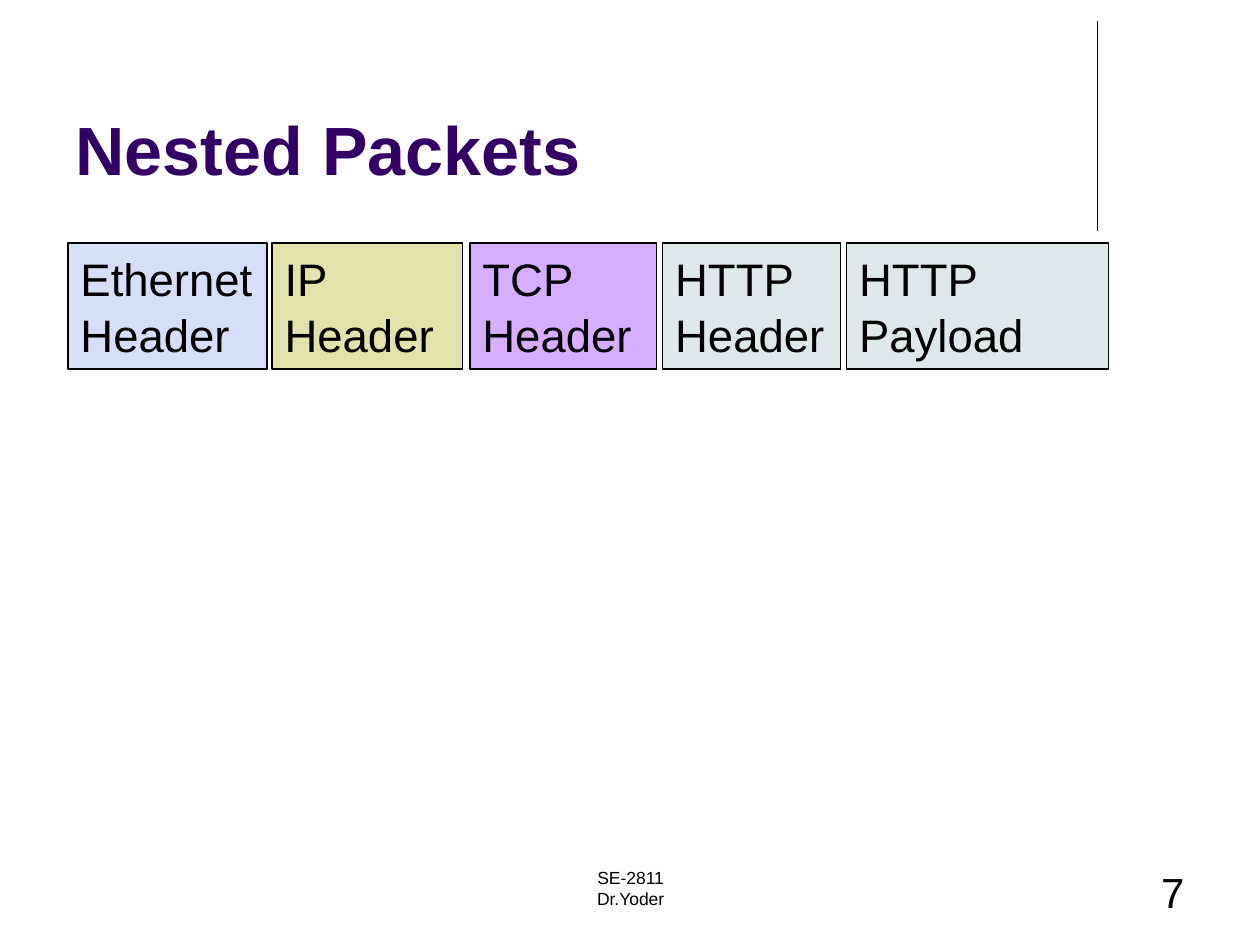
from pptx import Presentation
from pptx.dml.color import RGBColor
from pptx.enum.shapes import MSO_CONNECTOR, MSO_SHAPE
from pptx.enum.text import MSO_ANCHOR, PP_ALIGN
from pptx.oxml.ns import qn
from pptx.util import Inches, Pt
from lxml import etree

RECT = MSO_SHAPE.RECTANGLE
STRAIGHT = MSO_CONNECTOR.STRAIGHT
TOP, MIDDLE, BOTTOM = MSO_ANCHOR.TOP, MSO_ANCHOR.MIDDLE, MSO_ANCHOR.BOTTOM
LEFT, CENTER, RIGHT = PP_ALIGN.LEFT, PP_ALIGN.CENTER, PP_ALIGN.RIGHT

FIELDS = [
    ("Ethernet", "Header", 0.54, 1.58, "D5DFF7"),
    ("IP", "Header", 2.16, 1.51, "E2E2AA"),
    ("TCP", "Header", 3.73, 1.48, "D6ADFF"),
    ("HTTP", "Header", 5.26, 1.41, "DDE9E9"),
    ("HTTP", "Payload", 6.72, 2.08, "DDE9E9"),
]


def color(value):
    return RGBColor.from_string(value)


class SlideBuilder:
    font = "Arial"
    ink = "000000"
    line_width = Pt(0.75)

    def __init__(self, slide):
        self.slide = slide

    def set_text(self, sp, lines, size, align=LEFT, anchor=TOP, ink=ink, bold=False, gap=0):
        tf = sp.text_frame
        frame = {"word_wrap": True, "vertical_anchor": anchor}
        for name, value in frame.items():
            setattr(tf, name, value)
        style = {"name": self.font, "size": Pt(size), "bold": bold}
        for i, line in enumerate(lines):
            p = tf.add_paragraph() if i else tf.paragraphs[0]
            p.alignment = align
            p.space_before = Pt(gap if i else 0)
            r = p.add_run()
            r.text = line
            for name, value in style.items():
                setattr(r.font, name, value)
            r.font.color.rgb = color(ink)

    def title(self, text, left, top, width, height):
        sp = self.slide.shapes.title
        box = {"left": left, "top": top, "width": width, "height": height}
        for name, value in box.items():
            setattr(sp, name, Inches(value))
        self.set_text(sp, [text], 39, anchor=BOTTOM, ink="330066", bold=True)

    def text(self, lines, left, top, width, height, size, align):
        sp = self.slide.shapes.add_textbox(*map(Inches, (left, top, width, height)))
        self.set_text(sp, lines, size, align)

    def box(self, lines, left, top, width, height, fill):
        sp = self.slide.shapes.add_shape(RECT, *map(Inches, (left, top, width, height)))
        sp.shadow.inherit = False
        sp.fill.solid()
        sp.fill.fore_color.rgb = color(fill)
        sp.line.color.rgb = color(self.ink)
        sp.line.width = self.line_width
        sp.text_frame.margin_right = 0
        self.set_text(sp, lines, 26, anchor=MIDDLE, gap=1)

    def line(self, x1, y1, x2, y2):
        cxn = self.slide.shapes.add_connector(STRAIGHT, *map(Inches, (x1, y1, x2, y2)))
        cxn.line.color.rgb = color(self.ink)
        cxn.line.width = self.line_width
        etree.SubElement(cxn._element.spPr, qn("a:effectLst"))


def main():
    prs = Presentation()
    prs.slide_width, prs.slide_height = Inches(10), Inches(7.5)
    s = SlideBuilder(prs.slides.add_slide(prs.slide_layouts[5]))
    s.line(8.71, 0.17, 8.71, 1.83)
    s.title("Nested Packets", 0.5, 0.13, 8.25, 1.42)
    s.text(["SE-2811", "Dr.Yoder"], 3.42, 6.83, 3.17, 0.5, 10, CENTER)
    s.text(["7"], 7.17, 6.83, 2.33, 0.5, 24, RIGHT)
    for protocol, part, left, width, fill in FIELDS:
        s.box([protocol, part], left, 1.93, width, 1, fill)
    prs.save("out.pptx")


if __name__ == "__main__":
    main()
